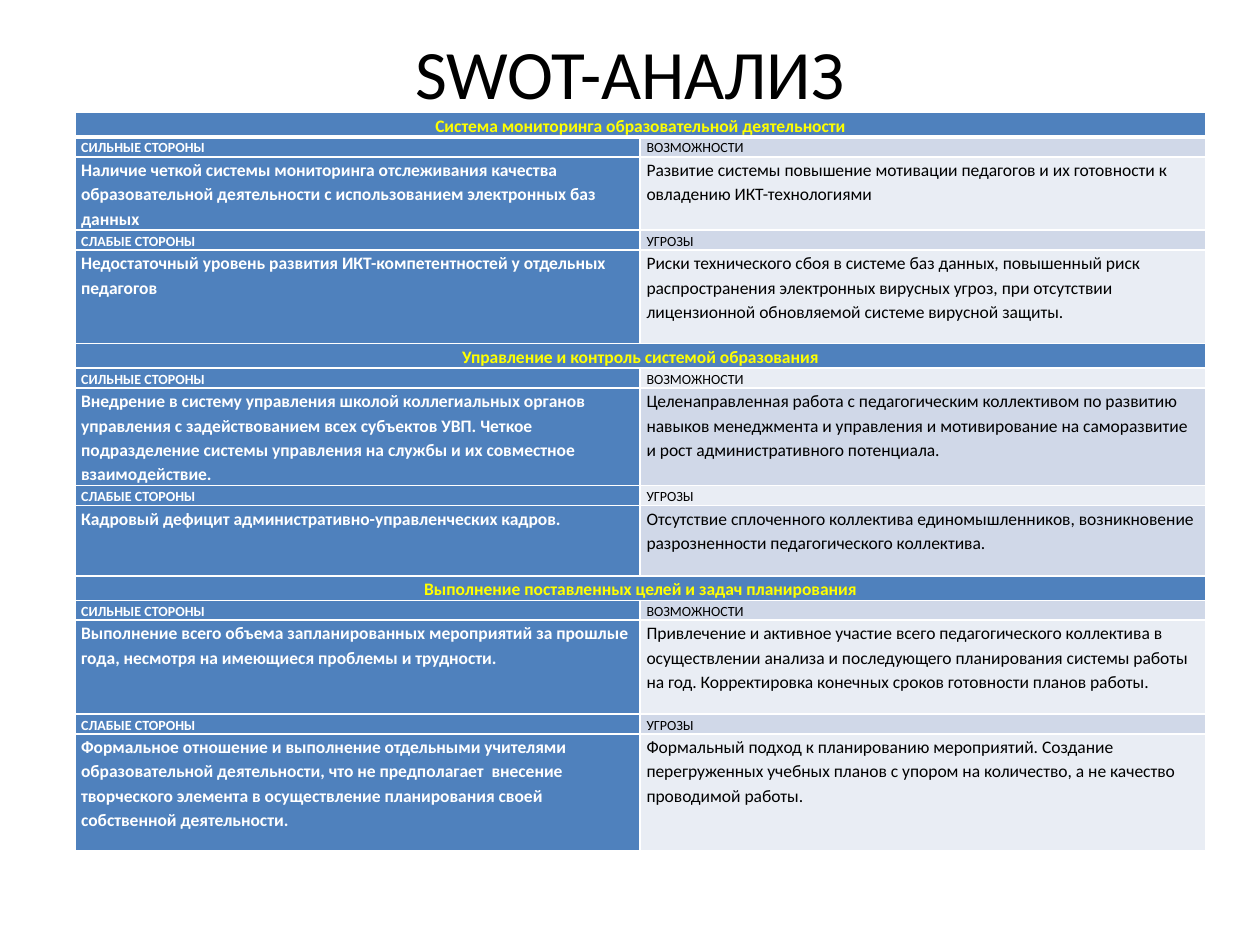
"""Build the SWOT analysis slide with its three-section table."""
from dataclasses import dataclass

from lxml import etree
from pptx import Presentation
from pptx import util as u
from pptx.dml.color import RGBColor
from pptx.enum import text
from pptx.oxml.ns import qn
from pptx.table import Table, _Cell

Pt = u.Pt


@dataclass(frozen=True)
class Theme:
    font: str = "Calibri"
    accent: str = "4F81BD"
    bands: tuple[str, str] = ("E9EDF4", "D0D8E8")
    light: str = "FFFFFF"
    dark: str = "000000"
    heading: str = "FFFF00"
    title_size: float = 39.6
    body_size: float = 10
    label_size: float = 8
    line_spacing: float = 1.15
    border: float = 1
    heavy_border: float = 3


@dataclass(frozen=True)
class Pair:
    left: str
    right: str
    height: float


@dataclass(frozen=True)
class Section:
    heading: str
    strengths: Pair
    weaknesses: Pair


THEME = Theme()
HEADING_HEIGHT, LABEL_HEIGHT = 13.8, 11
LEFT, TOP, COLUMN_WIDTH = 42.75, 64.25, 323.1
STRENGTH_LABELS = Pair("СИЛЬНЫЕ СТОРОНЫ", "ВОЗМОЖНОСТИ", LABEL_HEIGHT)
WEAKNESS_LABELS = Pair("СЛАБЫЕ СТОРОНЫ", "УГРОЗЫ", LABEL_HEIGHT)

SECTIONS = (
    Section(
        "Система мониторинга образовательной деятельности",
        Pair("Наличие четкой системы мониторинга отслеживания качества образовательной "
             "деятельности с использованием электронных баз данных",
             "Развитие системы повышение мотивации педагогов и их готовности к "
             "овладению ИКТ-технологиями", 40.3),
        Pair("Недостаточный уровень развития ИКТ-компетентностей у отдельных педагогов",
             "Риски технического сбоя в системе баз данных, повышенный риск "
             "распространения электронных вирусных угроз, при отсутствии "
             "лицензионной обновляемой системе вирусной защиты.", 53.6)),
    Section(
        "Управление и контроль системой образования",
        Pair("Внедрение в систему управления школой коллегиальных органов управления "
             "с задействованием всех субъектов УВП. Четкое подразделение системы "
             "управления на службы и их совместное взаимодействие.",
             "Целенаправленная работа с педагогическим коллективом по развитию навыков "
             "менеджмента и управления и мотивирование на саморазвитие и рост "
             "административного потенциала.", 53.6),
        Pair("Кадровый дефицит административно-управленческих кадров.",
             "Отсутствие сплоченного коллектива единомышленников, возникновение "
             "разрозненности педагогического коллектива.", 40.3)),
    Section(
        "Выполнение поставленных целей и задач планирования",
        Pair("Выполнение всего объема запланированных мероприятий за прошлые года, "
             "несмотря на имеющиеся проблемы и трудности.",
             "Привлечение и активное участие всего педагогического коллектива в "
             "осуществлении анализа и последующего планирования системы работы на год. "
             "Корректировка конечных сроков готовности планов работы.", 53.6),
        Pair("Формальное отношение и выполнение отдельными учителями образовательной "
             "деятельности, что не предполагает  внесение творческого элемента в "
             "осуществление планирования своей собственной деятельности.",
             "Формальный подход к планированию мероприятий. Создание перегруженных "
             "учебных планов с упором на количество, а не качество проводимой работы.",
             67)),
)


def format_paragraph(paragraph, size: float, color: str, bold: bool) -> None:
    """Apply the theme font to every run of a paragraph."""
    for run in paragraph.runs:
        run.font.name = THEME.font
        run.font.size = Pt(size)
        run.font.bold = bold
        run.font.color.rgb = RGBColor.from_string(color)


def draw_borders(cell: _Cell, row: int) -> None:
    """Draw white cell edges, heavier below the first row."""
    properties = cell._tc.get_or_add_tcPr()
    heavy_edge = {0: "a:lnB", 1: "a:lnT"}.get(row)
    for edge in ("a:lnL", "a:lnR", "a:lnT", "a:lnB"):
        width = THEME.heavy_border if edge == heavy_edge else THEME.border
        line = etree.SubElement(properties, qn(edge), w=str(int(Pt(width))))
        fill = etree.SubElement(line, qn("a:solidFill"))
        etree.SubElement(fill, qn("a:srgbClr"), val=THEME.light)


def style_cell(cell: _Cell, row: int, fill: str) -> None:
    """Set the margins, edges and fill of a cell."""
    cell.margin_left = cell.margin_right = Pt(3.6)
    cell.margin_top = cell.margin_bottom = 0
    draw_borders(cell, row)
    cell.fill.solid()
    cell.fill.fore_color.rgb = RGBColor.from_string(fill)


def write_cell(cell: _Cell, content: str, size: float, color: str, bold: bool) -> None:
    """Write one paragraph into a cell."""
    cell.text_frame.text = content
    paragraph = cell.text_frame.paragraphs[0]
    paragraph.line_spacing = THEME.line_spacing
    format_paragraph(paragraph, size, color, bold)


def draw_heading(table: Table, row: int, heading: str) -> None:
    """Fill a full-width section heading row."""
    table.rows[row].height = Pt(HEADING_HEIGHT)
    first, last = table.cell(row, 0), table.cell(row, 1)
    for cell in (first, last):
        style_cell(cell, row, THEME.accent)
    first.merge(last)
    write_cell(first, heading, THEME.body_size, THEME.heading, True)
    first.text_frame.paragraphs[0].alignment = text.PP_ALIGN.CENTER


def draw_pair(table: Table, row: int, pair: Pair, size: float) -> None:
    """Fill a row with its accent cell and its banded cell."""
    table.rows[row].height = Pt(pair.height)
    internal, external = table.cell(row, 0), table.cell(row, 1)
    style_cell(internal, row, THEME.accent)
    write_cell(internal, pair.left, size, THEME.light, True)
    style_cell(external, row, THEME.bands[row % 2])
    write_cell(external, pair.right, size, THEME.dark, False)


def draw_section(table: Table, first_row: int, section: Section) -> None:
    """Fill the five rows of one section."""
    draw_heading(table, first_row, section.heading)
    draw_pair(table, first_row + 1, STRENGTH_LABELS, THEME.label_size)
    draw_pair(table, first_row + 2, section.strengths, THEME.body_size)
    draw_pair(table, first_row + 3, WEAKNESS_LABELS, THEME.label_size)
    draw_pair(table, first_row + 4, section.weaknesses, THEME.body_size)


def main() -> None:
    """Create and save the presentation."""
    deck = Presentation()
    deck.slide_width, deck.slide_height = Pt(720), Pt(540)
    slide = deck.slides.add_slide(deck.slide_layouts[5])

    title = slide.shapes.title
    title.left, title.top, title.width, title.height = Pt(36), Pt(21.6), Pt(648), Pt(39)
    title.text_frame.text = "SWOT-АНАЛИЗ"
    title.text_frame.vertical_anchor = text.MSO_ANCHOR.MIDDLE
    heading = title.text_frame.paragraphs[0]
    heading.alignment = text.PP_ALIGN.CENTER
    format_paragraph(heading, THEME.title_size, THEME.dark, False)

    swot = slide.shapes.add_table(5 * len(SECTIONS), 2, Pt(LEFT), Pt(TOP),
                                  Pt(2 * COLUMN_WIDTH), Pt(417)).table
    for column in swot.columns:
        column.width = Pt(COLUMN_WIDTH)
    for index, section in enumerate(SECTIONS):
        draw_section(swot, 5 * index, section)

    deck.save("out.pptx")


if __name__ == "__main__":
    main()
